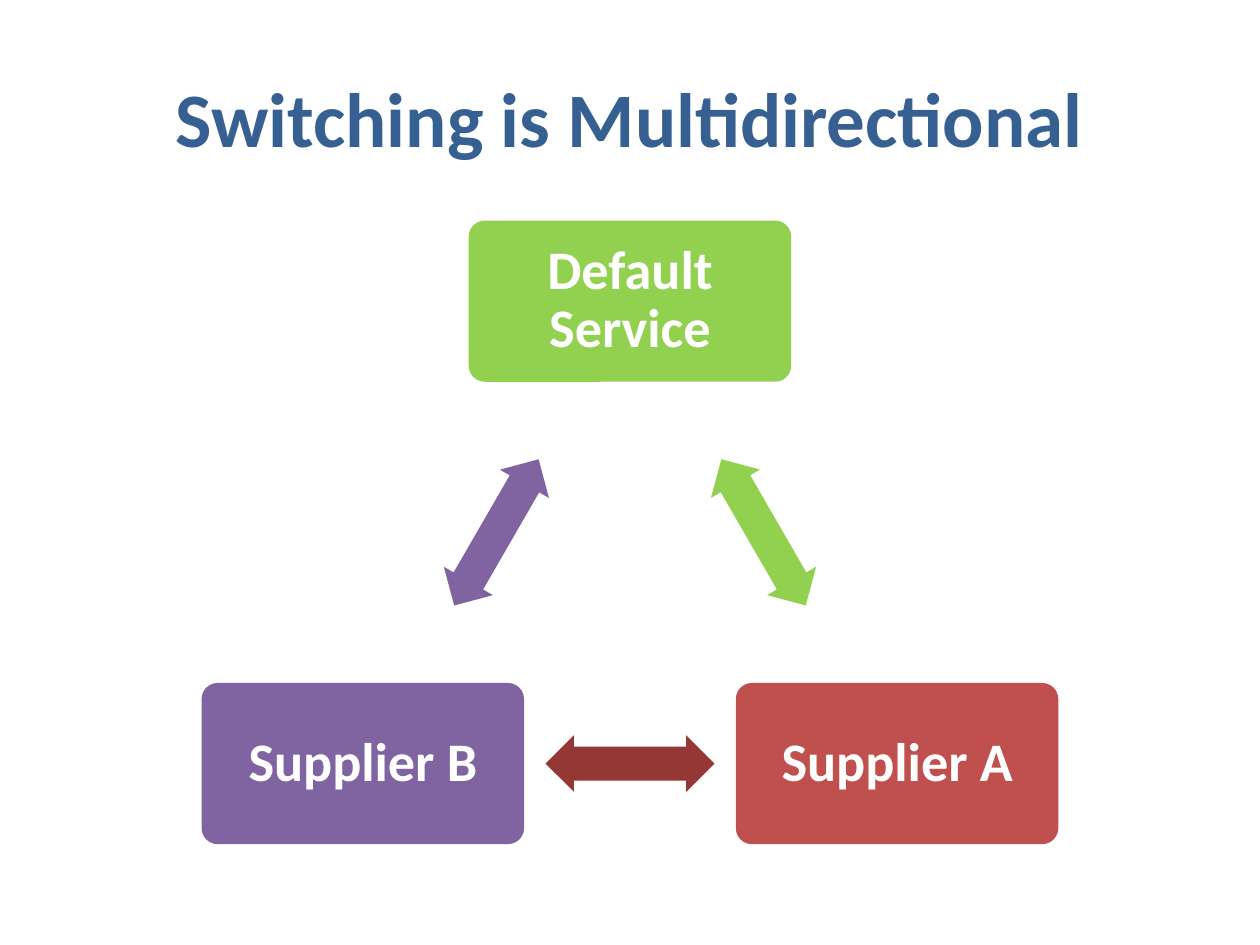
from dataclasses import dataclass

from pptx import Presentation
from pptx.dml.color import RGBColor
from pptx.enum.shapes import MSO_SHAPE as Shape
from pptx.enum.text import MSO_ANCHOR as Anchor, PP_ALIGN as Align
from pptx.util import Inches, Pt


@dataclass(frozen=True)
class Theme:
    font: str = "Calibri"
    title_size: int = 44
    node_size: int = 31
    title: str = "376092"
    white: str = "FFFFFF"
    green: str = "92D050"
    red: str = "C0504D"
    dark_red: str = "953735"
    purple: str = "8064A2"


THEME = Theme()
NODE_WIDTH, NODE_HEIGHT = 2.56, 1.28
ARROW_WIDTH, ARROW_HEIGHT = 1.34, 0.45


def write_text(shape, text, size, color):
    frame = shape.text_frame
    frame.text = text
    frame.word_wrap = True
    frame.vertical_anchor = Anchor.MIDDLE
    paragraph = frame.paragraphs[0]
    paragraph.alignment = Align.CENTER
    font = paragraph.runs[0].font
    font.name, font.size, font.bold = THEME.font, Pt(size), True
    font.color.rgb = RGBColor.from_string(color)


def add_centered_shape(slide, kind, center, width, height, color):
    x, y = center
    shape = slide.shapes.add_shape(
        kind, Inches(x - width / 2), Inches(y - height / 2),
        Inches(width), Inches(height))
    shape.shadow.inherit = False
    shape.fill.solid()
    shape.fill.fore_color.rgb = RGBColor.from_string(color)
    shape.line.fill.background()
    return shape


def add_title(slide, left, top, width, height):
    box = slide.shapes.add_textbox(
        Inches(left), Inches(top), Inches(width), Inches(height))
    write_text(box, "Switching is Multidirectional", THEME.title_size, THEME.title)


def add_node(slide, center, text, color):
    node = add_centered_shape(
        slide, Shape.ROUNDED_RECTANGLE, center, NODE_WIDTH, NODE_HEIGHT, color)
    node.adjustments[0] = 0.1
    write_text(node, text, THEME.node_size, THEME.white)
    frame = node.text_frame
    frame.margin_left = frame.margin_right = Inches(0.16)
    frame.margin_top = frame.margin_bottom = Inches(0.16)
    frame.paragraphs[0].line_spacing = 0.9


def add_arrow(slide, start, end, rotation, color):
    middle = [(a + b) / 2 for a, b in zip(start, end)]
    arrow = add_centered_shape(
        slide, Shape.LEFT_RIGHT_ARROW, middle, ARROW_WIDTH, ARROW_HEIGHT, color)
    arrow.adjustments[0], arrow.adjustments[1] = 0.6, 0.5
    arrow.rotation = rotation


def add_cycle(slide, left, top, width, height):
    # Node centers form a triangle, listed clockwise from the top
    lower = top + height - NODE_HEIGHT / 2
    centers = [
        (left + width / 2, top + NODE_HEIGHT / 2),
        (left + width - NODE_WIDTH / 2, lower),
        (left + NODE_WIDTH / 2, lower),
    ]
    parts = [
        ("Default Service", THEME.green, THEME.green),
        ("Supplier A", THEME.red, THEME.dark_red),
        ("Supplier B", THEME.purple, THEME.purple),
    ]
    for index, (text, node_color, arrow_color) in enumerate(parts):
        start, end = centers[index], centers[(index + 1) % len(centers)]
        add_node(slide, start, text, node_color)
        # Each side of the triangle turns by another 120 degrees
        add_arrow(slide, start, end, 60 + 120 * index, arrow_color)


def main():
    presentation = Presentation()
    presentation.slide_width, presentation.slide_height = Inches(10), Inches(7.5)
    slide = presentation.slides.add_slide(presentation.slide_layouts[6])
    add_title(slide, 0.5, 0.3, 9, 1.25)
    add_cycle(slide, 1.6, 1.75, 6.8, 4.95)
    presentation.save("out.pptx")


if __name__ == "__main__":
    main()
